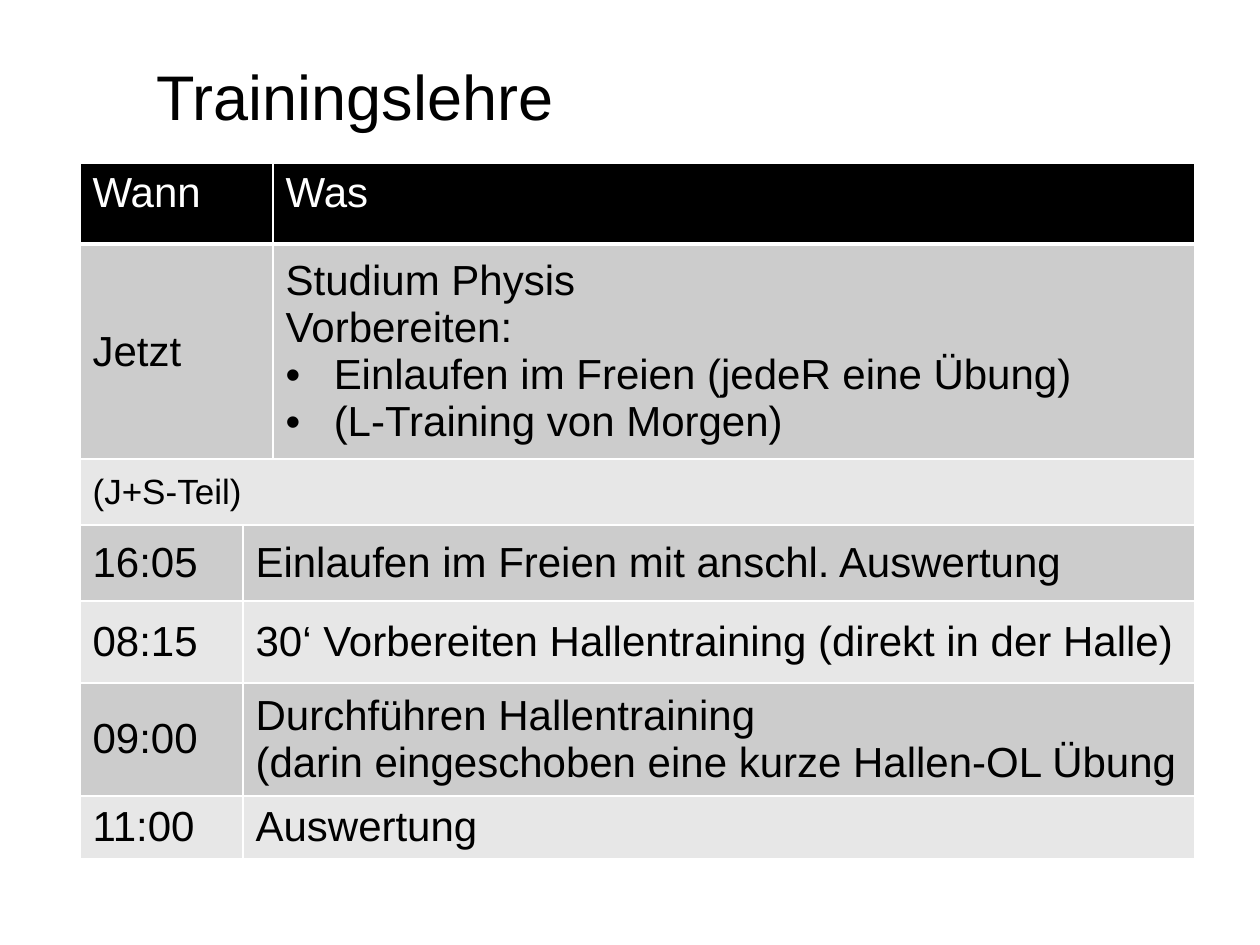
from dataclasses import dataclass

from lxml.etree import SubElement as Sub
from pptx import Presentation
from pptx.dml.color import RGBColor as Rgb
from pptx.enum.text import MSO_ANCHOR as Anchor, PP_ALIGN as Align
from pptx.oxml.ns import qn
from pptx.util import Pt

SCALE = 914400 // 126
BLACK, WHITE, DARK, LIGHT = "000000", "FFFFFF", "CCCCCC", "E7E7E7"
COLS = [163, 30, 922]
BULLET = "• "


@dataclass
class Row:
    height: int
    split: int  # column where the second cell starts; 3 means one wide cell
    texts: list[list[str]]
    size: int = 24


ROWS = [
    Row(81, 2, [["Wann"], ["Was"]]),
    Row(215, 2, [["Jetzt"], ["Studium Physis", "Vorbereiten:",
                             BULLET + "Einlaufen im Freien (jedeR eine Übung)",
                             BULLET + "(L-Training von Morgen)"]]),
    Row(66, 3, [["(J+S-Teil)"]], 20),
    Row(76, 1, [["16:05"], ["Einlaufen im Freien mit anschl. Auswertung"]]),
    Row(82, 1, [["08:15"], ["30‘ Vorbereiten Hallentraining (direkt in der Halle)"]]),
    Row(113, 1, [["09:00"], ["Durchführen Hallentraining\n"
                             "(darin eingeschoben eine kurze Hallen-OL Übung"]]),
    Row(63, 1, [["11:00"], ["Auswertung"]]),
]


def px(num: int) -> int:
    return num * SCALE


def rgb(code: str) -> Rgb:
    return Rgb.from_string(code)


def style(para, size: int, color: str) -> None:
    look = {"name": "Arial", "size": Pt(size), "bold": False}
    for run in para.runs:
        for key, val in look.items():
            setattr(run.font, key, val)
        run.font.color.rgb = rgb(color)


def border(cell, widths: dict[str, int]) -> None:
    props = cell._tc.get_or_add_tcPr()
    for side, width in widths.items():
        line = Sub(props, qn(f"a:ln{side}"), w=str(Pt(width)))
        Sub(Sub(line, qn("a:solidFill")), qn("a:srgbClr"), val=WHITE)


def indent(para) -> None:
    props = para._p.get_or_add_pPr()
    props.set("marL", str(px(48)))
    props.set("indent", str(px(-48)))
    Sub(props, qn("a:buFont"), typeface="Arial")
    Sub(props, qn("a:buChar"), char=BULLET.strip())


def write(cell, lines: list[str], size: int, color: str) -> None:
    frame = cell.text_frame
    for i, line in enumerate(lines):
        para = frame.add_paragraph() if i else frame.paragraphs[0]
        if line.startswith(BULLET):
            indent(para)
        para.text = line.removeprefix(BULLET)
        style(para, size, color)


def fill_row(table, num: int, row: Row) -> None:
    head = num == 0
    back = BLACK if head else (DARK if num % 2 else LIGHT)
    table.rows[num].height = px(row.height)
    for cell in table.rows[num].cells:
        border(cell, {"L": 1, "R": 1, "T": 3 if num == 1 else 1, "B": 3 if head else 1})
        cell.fill.solid()
        cell.fill.fore_color.rgb = rgb(back)
        cell.vertical_anchor = Anchor.TOP if head else Anchor.MIDDLE
    edges = [0, row.split, len(COLS)]
    for start, end, lines in zip(edges, edges[1:], row.texts):
        cell = table.cell(num, start)
        if end - start > 1:
            cell.merge(table.cell(num, end - 1))
        write(cell, lines, row.size, WHITE if head else BLACK)


def add_plan(slide) -> None:
    high = sum(row.height for row in ROWS)
    table = slide.shapes.add_table(len(ROWS), len(COLS), px(80), px(163),
                                   px(sum(COLS)), px(high)).table
    for col, width in zip(table.columns, COLS):
        col.width = px(width)
    for num, row in enumerate(ROWS):
        fill_row(table, num, row)


def set_title(slide, text: str) -> None:
    title = slide.shapes.title
    place = {"left": 144, "top": 16, "width": 1023, "height": 158}
    for key, val in place.items():
        setattr(title, key, px(val))
    frame = title.text_frame
    frame.text = text
    frame.vertical_anchor = Anchor.MIDDLE
    frame.paragraphs[0].alignment = Align.LEFT
    style(frame.paragraphs[0], 36, BLACK)


def main() -> None:
    deck = Presentation()
    deck.slide_width, deck.slide_height = px(1260), px(945)
    slide = deck.slides.add_slide(deck.slide_layouts[5])
    set_title(slide, "Trainingslehre")
    add_plan(slide)
    deck.save("out.pptx")


if __name__ == "__main__":
    main()
